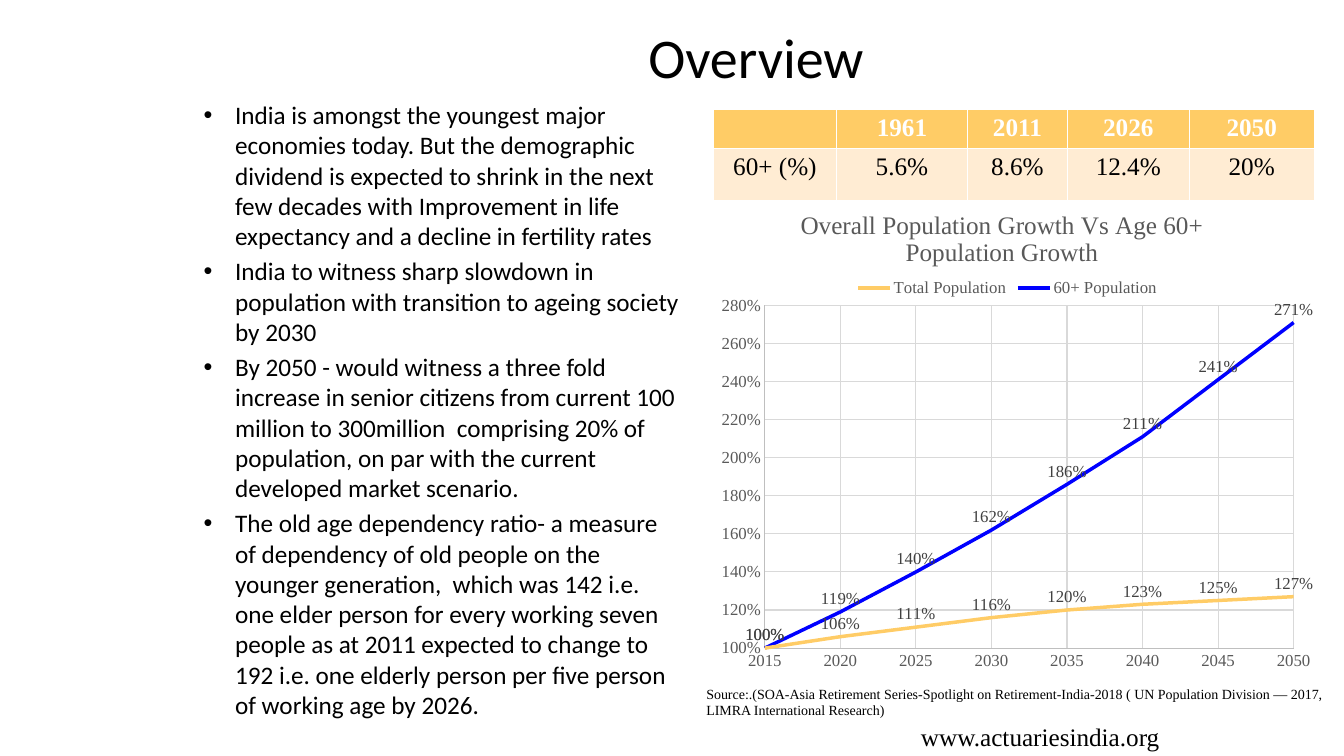
import dataclasses

import lxml.etree
import pptx
import pptx.chart.data
import pptx.chart.datalabel
import pptx.dml.color
import pptx.enum.chart
import pptx.enum.text
import pptx.oxml
import pptx.oxml.ns
import pptx.util

Cm = pptx.util.Cm
Pt = pptx.util.Pt
qn = pptx.oxml.ns.qn

COLORS = {
    "black": "000000", "white": "FFFFFF", "amber": "FFCC66", "cream": "FFECD3", "blue": "0000FF",
    "axis": "BFBFBF", "grid": "D9D9D9", "muted": "595959", "label": "404040",
}
SANS = "Calibri"
SERIF = "Times New Roman"


@dataclasses.dataclass(frozen=True)
class Box:
    left: float
    top: float
    width: float
    height: float

    def lengths(self) -> tuple:
        return Cm(self.left), Cm(self.top), Cm(self.width), Cm(self.height)


@dataclasses.dataclass(frozen=True)
class Caption:
    text: str
    box: Box
    size: int


@dataclasses.dataclass(frozen=True)
class Growth:
    name: str
    percents: tuple
    color: str


TITLE_BOX = Box(4.88, 0.79, 28.34, 1.59)
POINTS_BOX = Box(4.88, 2.38, 12.54, 16.66)
TABLE_BOX = Box(17.98, 2.75, 15.14, 2.31)
CHART_BOX = Box(17.55, 4.65, 15.68, 12.7)

POINTS = (
    "India is amongst the youngest major economies today. But the demographic dividend is "
    "expected to shrink in the next few decades with Improvement in life expectancy and a "
    "decline in fertility rates",
    "India to witness sharp slowdown in population with transition to ageing society by 2030",
    "By 2050 - would witness a three fold increase in senior citizens from current 100 million "
    "to 300million  comprising 20% of population, on par with the current developed market "
    "scenario.",
    "The old age dependency ratio- a measure of dependency of old people on the younger "
    "generation,  which was 142 i.e. one elder person for every working seven people as at 2011 "
    "expected to change to 192 i.e. one elderly person per five person of working age by 2026.",
)
SHARE_ROWS = (("", "1961", "2011", "2026", "2050"), ("60+ (%)", "5.6%", "8.6%", "12.4%", "20%"))
COLUMN_WIDTHS = (3.1, 3.3, 2.52, 3.07, 3.15)
ROW_HEIGHTS = (0.99, 1.32)
YEARS = range(2015, 2051, 5)
GROWTHS = (
    Growth("Total Population", (100, 106, 111, 116, 120, 123, 125, 127), "amber"),
    Growth("60+ Population", (100, 119, 140, 162, 186, 211, 241, 271), "blue"),
)
CAPTIONS = (
    Caption("www.actuariesindia.org", Box(22.96, 18.06, 8.06, 1.02), 18),
    Caption("Source:.(SOA-Asia Retirement Series-Spotlight on Retirement-India-2018 "
            "( UN Population Division — 2017, LIMRA International Research)",
            Box(17.55, 17.14, 16.1, 1.12), 10),
)


def rgb(color: str) -> pptx.dml.color.RGBColor:
    return pptx.dml.color.RGBColor.from_string(COLORS[color])


def set_font(font, name: str, size: int, color: str, bold: bool = False) -> None:
    font.name = name
    font.size = Pt(size)
    font.bold = bold
    font.color.rgb = rgb(color)


def set_line(line, color: str, width: float) -> None:
    line.color.rgb = rgb(color)
    line.width = Pt(width)


def fill_placeholder(shape, box: Box, text: str):
    shape.left, shape.top, shape.width, shape.height = box.lengths()
    shape.text_frame.text = text
    shape.text_frame.auto_size = pptx.enum.text.MSO_AUTO_SIZE.NONE
    return shape.text_frame


def fill_title(title) -> None:
    frame = fill_placeholder(title, TITLE_BOX, "Overview")
    frame.vertical_anchor = pptx.enum.text.MSO_ANCHOR.BOTTOM
    frame.paragraphs[0].alignment = pptx.enum.text.PP_ALIGN.CENTER
    set_font(frame.paragraphs[0].font, SANS, 40, "black")


def fill_points(body) -> None:
    frame = fill_placeholder(body, POINTS_BOX, "\n".join(POINTS))
    for index, point in enumerate(frame.paragraphs):
        properties = point._p.get_or_add_pPr()
        properties.set("marL", str(Cm(0.79)))
        properties.set("indent", str(Cm(-0.79)))
        lxml.etree.SubElement(properties, qn("a:buFont")).set("typeface", "Arial")
        lxml.etree.SubElement(properties, qn("a:buChar")).set("char", "•")
        point.space_before = Pt(3.6 if index else 0)
        set_font(point.font, SANS, 18, "black")


def add_share_table(shapes) -> None:
    table = shapes.add_table(len(SHARE_ROWS), len(COLUMN_WIDTHS), *TABLE_BOX.lengths()).table
    for column, width in zip(table.columns, COLUMN_WIDTHS):
        column.width = Cm(width)
    for index, (row, height, texts) in enumerate(zip(table.rows, ROW_HEIGHTS, SHARE_ROWS)):
        row.height = Cm(height)
        header = index == 0
        for cell, text in zip(row.cells, texts):
            cell.text = text
            cell.fill.solid()
            cell.fill.fore_color.rgb = rgb("amber" if header else "cream")
            entry = cell.text_frame.paragraphs[0]
            entry.alignment = pptx.enum.text.PP_ALIGN.CENTER
            set_font(entry.font, SERIF, 18, "white" if header else "black", header)


def set_layout(element, **settings) -> None:
    for old in element.findall(qn("c:layout")):
        element.remove(old)
    layout = pptx.oxml.parse_xml(f'<c:layout {pptx.oxml.ns.nsdecls("c")}><c:manualLayout/></c:layout>')
    for key, value in settings.items():
        lxml.etree.SubElement(layout[0], qn(f"c:{key}")).set("val", str(value))
    overlay = element.find(qn("c:overlay"))
    element.insert(0 if overlay is None else element.index(overlay), layout)


def style_axis(axis, low: float, high: float, step: float, number_format: str) -> None:
    axis.minimum_scale, axis.maximum_scale, axis.major_unit = low, high, step
    axis.major_tick_mark = axis.minor_tick_mark = pptx.enum.chart.XL_TICK_MARK.NONE
    axis.has_major_gridlines = True
    set_line(axis.major_gridlines.format.line, "grid", 0.75)
    set_line(axis.format.line, "axis", 0.75)
    axis.tick_labels.number_format = number_format
    axis.tick_labels.number_format_is_linked = False
    set_font(axis.tick_labels.font, SERIF, 12, "muted")


def add_growth_chart(shapes) -> None:
    data = pptx.chart.data.XyChartData(number_format="0%")
    for growth in GROWTHS:
        series = data.add_series(growth.name)
        for year, percent in zip(YEARS, growth.percents):
            series.add_data_point(year, percent / 100)
    kind = pptx.enum.chart.XL_CHART_TYPE.XY_SCATTER_SMOOTH_NO_MARKERS
    chart = shapes.add_chart(kind, *CHART_BOX.lengths(), data).chart
    set_font(chart.font, SERIF, 10, "black")
    heading = chart.chart_title.text_frame
    heading.text = "Overall Population Growth Vs Age 60+ Population Growth"
    set_font(heading.paragraphs[0].font, SERIF, 18, "muted")
    chart.has_legend = True
    chart.legend.position = pptx.enum.chart.XL_LEGEND_POSITION.TOP
    chart.legend.include_in_layout = False
    set_font(chart.legend.font, SERIF, 12, "muted")
    style_axis(chart.category_axis, YEARS[0], YEARS[-1], 5, "General")
    style_axis(chart.value_axis, 1, 2.8, 0.2, "0%")
    chart.plots[0].vary_by_categories = False
    for series, growth in zip(chart.plots[0].series, GROWTHS):
        set_line(series.format.line, growth.color, 2.5)
        labels = pptx.chart.datalabel.DataLabels(series._element.get_or_add_dLbls())
        labels.show_value = True
        labels.position = pptx.enum.chart.XL_LABEL_POSITION.ABOVE
        labels.number_format = "0%"
        labels.number_format_is_linked = False
        set_font(labels.font, SERIF, 12, "label")
    edges = {"xMode": "edge", "yMode": "edge"}
    plot_area = chart._chartSpace.chart.plotArea
    set_layout(plot_area, layoutTarget="inner", **edges, x=0.11, y=0.24, w=0.85, h=0.68)
    set_layout(chart.chart_title._element, **edges, x=0.16, y=0.04)
    set_layout(chart.legend._element, **edges, x=0.25, y=0.18, w=0.5, h=0.05)


def add_caption(shapes, caption: Caption) -> None:
    frame = shapes.add_textbox(*caption.box.lengths()).text_frame
    frame.word_wrap = True
    frame.text = caption.text
    set_font(frame.paragraphs[0].font, SERIF, caption.size, "black")


def main() -> None:
    deck = pptx.Presentation()
    deck.slide_width, deck.slide_height = Cm(33.87), Cm(19.05)
    slide = deck.slides.add_slide(deck.slide_layouts[1])
    fill_title(slide.shapes.title)
    add_growth_chart(slide.shapes)
    fill_points(slide.placeholders[1])
    add_share_table(slide.shapes)
    for caption in CAPTIONS:
        add_caption(slide.shapes, caption)
    deck.save("out.pptx")


if __name__ == "__main__":
    main()
